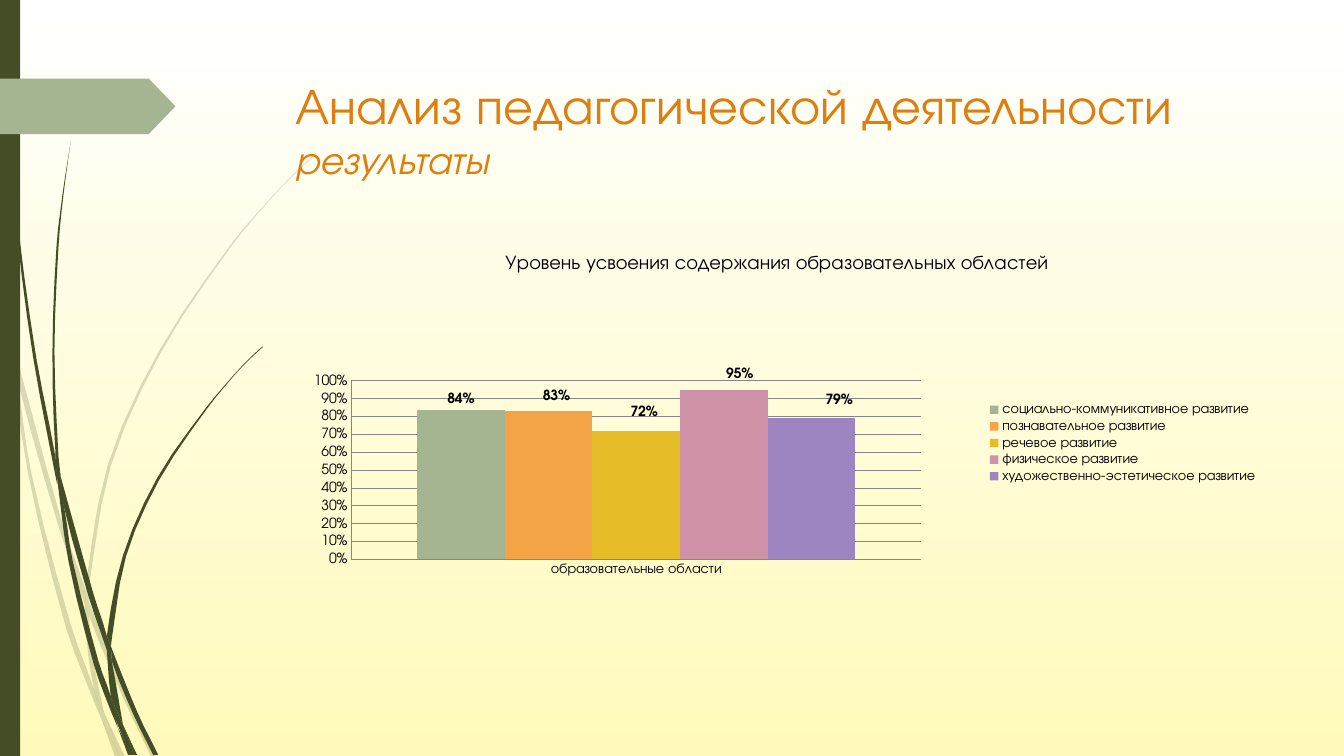
from math import dist
from lxml import etree
from pptx import Presentation
from pptx.chart.data import CategoryChartData
from pptx.dml.color import RGBColor
from pptx.enum.chart import XL_CHART_TYPE as Kind, XL_LABEL_POSITION as Spot
from pptx.enum.chart import XL_LEGEND_POSITION as Side, XL_TICK_MARK as Tick
from pptx.enum.shapes import MSO_SHAPE as Form
from pptx.enum.text import MSO_ANCHOR as Anchor
from pptx.oxml import parse_xml
from pptx.oxml.ns import qn
from pptx.util import Inches, Pt

WIDE, HIGH = 13.33, 7.5
FONT = "TeX Gyre Adventor"
DARK, SAGE, AMBER, GRAY = "444D26", "A5B592", "DD7E0E", "868686"
SKY = ["FFFFFF", "FFFABB"]

# Title runs: text, size, italic
TITLE = [("Анализ педагогической деятельности ", 36, False),
         ("результаты", 28, True)]

# Chart: name, value, colour, label shift as shares of the chart
HEAD = "Уровень усвоения содержания образовательных областей"
GROUP = "образовательные области"
AREAS = [
    ("социально-коммуникативное развитие", 0.84, SAGE, None),
    ("познавательное развитие", 0.83, "F3A447", (0.008, -0.012)),
    ("речевое развитие", 0.72, "E7BC29", (0.008, -0.02)),
    ("физическое развитие", 0.95, "D092A7", (0.016, -0.012)),
    ("художественно-эстетическое развитие", 0.79, "9C85C0", (0.028, -0.02)),
]
PLOT = {"x": 0.067, "y": 0.351, "w": 0.58, "h": 0.429}

# Grass blades: the knots of each outline, in inches
PALE = [
    [(0.11, 3.5), (0.09, 3.22), (0, 2.82), (0, 2.99), (0.1, 3.44)],
    [(0.58, 5.22), (0.84, 5.99), (0.85, 5.86), (0.62, 5.2), (0.14, 3.45),
     (0.17, 3.76)],
    [(0.92, 6.07), (0.88, 5.96), (0.88, 6.1), (1.23, 6.94), (1.5, 7.51),
     (1.55, 7.51), (1.27, 6.92)],
    [(1.19, 7.51), (1.24, 7.51), (1.05, 7.11)],
    [(0.93, 6.83), (0.7, 6.19), (0.31, 4.69), (0.17, 3.76), (0.11, 3.5),
     (0.28, 4.7), (0.65, 6.21), (0.92, 6.93), (1.01, 7.14), (0.99, 7.07)],
    [(0.84, 5.99), (0.87, 6.46), (0.93, 6.83), (0.96, 6.92), (1.05, 7.11),
     (1.03, 7.06), (0.91, 6.46), (0.88, 6.1)],
    [(0.88, 5.84), (1.1, 4.62), (1.6, 3.49), (2.29, 2.45), (2.68, 1.98),
     (2.9, 1.75), (3.12, 1.54), (3.12, 1.53), (2.89, 1.75), (2.68, 1.97),
     (2.28, 2.44), (1.58, 3.48), (1.07, 4.61), (0.85, 5.84), (0.88, 5.96)],
    [(1.01, 7.14), (1.14, 7.51), (1.19, 7.51)],
    [(0.88, 6.1), (0.88, 5.96), (0.85, 5.86), (0.84, 5.99)],
    [(0.96, 6.92), (0.93, 6.83), (0.99, 7.07), (1.01, 7.14), (1.19, 7.51),
     (1.05, 7.11)],
]
DEEP = [
    [(0.07, 1.1), (0.17, 2.33), (0.33, 3.55), (0.56, 4.77), (0.57, 4.81),
     (0.55, 4.53), (0.36, 3.55), (0.19, 2.32), (0.08, 1.09), (0.05, 0.48),
     (0.04, 0), (0.03, 0), (0.04, 0.48)],
    [(0.88, 5.92), (1.06, 6.45), (1.06, 6.31), (0.93, 5.9), (0.6, 4.72),
     (0.64, 5.05)],
    [(1.13, 6.49), (1.1, 6.41), (1.11, 6.56), (1.32, 7.08), (1.52, 7.49),
     (1.57, 7.49), (1.36, 7.06)],
    [(1.1, 6.91), (0.98, 6.57), (0.72, 5.56), (0.64, 5.05), (0.57, 4.77),
     (0.68, 5.57), (0.93, 6.59), (1.11, 7.08), (1.17, 7.22), (1.16, 7.17)],
    [(0.6, 4.72), (0.58, 4.53), (0.54, 3.49), (0.58, 2.45), (0.63, 1.93),
     (0.7, 1.41), (0.62, 1.93), (0.56, 2.45), (0.52, 3.49), (0.55, 4.49)],
    [(1.33, 7.49), (1.36, 7.49), (1.22, 7.19)],
    [(0.57, 4.77), (0.64, 5.05), (0.6, 4.72), (0.55, 4.49), (0.55, 4.53)],
    [(1.11, 6.33), (1.25, 5.52), (1.58, 4.76), (2.05, 4.06), (2.31, 3.74),
     (2.45, 3.59), (2.61, 3.44), (2.6, 3.44), (2.45, 3.58), (2.31, 3.73),
     (2.04, 4.05), (1.56, 4.74), (1.22, 5.51), (1.06, 6.31), (1.1, 6.41)],
    [(1.17, 7.22), (1.27, 7.49), (1.31, 7.49)],
    [(1.06, 6.45), (1.1, 6.91), (1.16, 7.06), (1.22, 7.19), (1.11, 6.56),
     (1.09, 6.51)],
    [(1.06, 6.45), (1.11, 6.56), (1.1, 6.41), (1.06, 6.31)],
    [(1.16, 7.06), (1.1, 6.91), (1.16, 7.17), (1.3, 7.49), (1.33, 7.49),
     (1.22, 7.19)],
]


def color(code):
    return RGBColor.from_string(code)


def paint(shape, code, alpha=None):
    shape.shadow.inherit = False
    shape.fill.solid()
    shape.fill.fore_color.rgb = color(code)
    shape.line.fill.background()
    if alpha:
        tint = shape.fill._xPr.find(".//" + qn("a:srgbClr"))
        etree.SubElement(tint, qn("a:alpha")).set("val", str(alpha * 1000))


def unit(a, b):
    return [(q - p) / dist(a, b) for p, q in zip(a, b)]


def smooth(ring, steps=3):
    """Curve through all knots of a ring, keeping its sharp corners."""
    curve = []
    for i, b in enumerate(ring):
        a, c, d = ring[i - 1], ring[(i + 1) % len(ring)], ring[(i + 2) % len(ring)]
        way, size = unit(b, c), dist(b, c)
        bend = [sum(p * q for p, q in zip(way, unit(*leg)))
                for leg in ((a, b), (c, d))]
        start = unit(a, c) if bend[0] > 0.7 else way
        stop = unit(b, d) if bend[1] > 0.7 else way
        for t in (n / steps for n in range(steps if size > 0.2 else 1)):
            curve.append(tuple(
                p + t * t * (3 - 2 * t) * (q - p)
                + size * t * (1 - t) * ((1 - t) * u - t * v)
                for p, q, u, v in zip(b, c, start, stop)))
    return curve


def blade(ring, alpha=None):
    dots = [(x * 1000, y * 1000) for x, y in smooth(ring)]
    pen = slide.shapes.build_freeform(*dots[0], scale=Inches(1) / 1000)
    pen.add_line_segments(dots[1:], close=True)
    paint(pen.convert_to_shape(), DARK, alpha)


def layout(inner="", **share):
    parts = "".join(f'<c:{k} val="{v}"/>' for k, v in share.items())
    return parse_xml(
        '<c:layout xmlns:c="http://schemas.openxmlformats.org/drawingml/2006/'
        f'chart"><c:manualLayout>{inner}{parts}</c:manualLayout></c:layout>')


def style(font, size, code="000000", bold=False):
    font.name, font.size, font.bold = FONT, Pt(size), bold
    font.color.rgb = color(code)


deck = Presentation()
deck.slide_width, deck.slide_height = Inches(WIDE), Inches(HIGH)
slide = deck.slides.add_slide(deck.slide_layouts[6])
# Background
back = slide.background.fill
back.gradient()
back.gradient_angle = 270
for stop, code in zip(back.gradient_stops, SKY):
    stop.color.rgb = color(code)
# Grass, side bar and arrow
for ring in PALE:
    blade(ring, alpha=20)
for ring in DEEP:
    blade(ring)
bar = slide.shapes.add_shape(Form.RECTANGLE, 0, 0, Inches(0.2), Inches(HIGH))
paint(bar, DARK)
arrow = slide.shapes.add_shape(Form.PENTAGON, 0, Inches(0.78), Inches(1.74), Inches(0.55))
arrow.adjustments[0] = 0.48
paint(arrow, SAGE)
# Title
box = slide.shapes.add_textbox(Inches(2.83), Inches(0.69), Inches(9.75), Inches(1.4))
frame = box.text_frame
frame.word_wrap, frame.vertical_anchor = True, Anchor.TOP
for text, size, slant in TITLE:
    run = frame.paragraphs[0].add_run()
    run.text = text
    style(run.font, size, AMBER)
    run.font.italic = slant
# Chart
data = CategoryChartData(number_format="0%")
data.categories = [GROUP]
for name, value, *_ in AREAS:
    data.add_series(name, [value])
chart = slide.shapes.add_chart(Kind.COLUMN_CLUSTERED, Inches(2.83), Inches(2.33),
                               Inches(9.75), Inches(4.13), data).chart
style(chart.font, 10)
chart.has_title = chart.has_legend = True
chart.chart_title.text_frame.text = HEAD
style(chart.chart_title.text_frame.paragraphs[0].runs[0].font, 14)
chart.chart_title.include_in_layout = chart.legend.include_in_layout = False
chart.legend.position = Side.RIGHT
# Plot area and axes
area = chart._chartSpace.chart.plotArea
for old in area.findall(qn("c:layout")):
    area.remove(old)
area.insert(0, layout('<c:layoutTarget val="inner"/>', xMode="edge", yMode="edge", **PLOT))
rise, base = chart.value_axis, chart.category_axis
rise.minimum_scale, rise.maximum_scale, rise.major_unit = 0, 1, 0.1
rise.tick_labels.number_format = "0%"
rise.tick_labels.number_format_is_linked = False
rise.has_major_gridlines = True
for axis in (rise, base):
    axis.major_tick_mark = axis.minor_tick_mark = Tick.NONE
    style(axis.tick_labels.font, 10)
for part in (rise.major_gridlines, rise, base):
    part.format.line.color.rgb, part.format.line.width = color(GRAY), Pt(0.75)
# Columns and their labels
plot = chart.plots[0]
plot.gap_width, plot.overlap, plot.vary_by_categories = 150, 0, False
for series, (_, _, code, shift) in zip(plot.series, AREAS):
    series.format.fill.solid()
    series.format.fill.fore_color.rgb = color(code)
    tags = series.data_labels
    tags.show_value, tags.position = True, Spot.OUTSIDE_END
    tags.number_format, tags.number_format_is_linked = "0%", False
    style(tags.font, 10, bold=True)
    for lead in series._element.iter(qn("c:showLeaderLines")):
        lead.set("val", "0")
    if shift:
        tag = series.points[0].data_label
        style(tag.font, 10, bold=True)
        tag.position = Spot.OUTSIDE_END
        node = series._element.find(".//" + qn("c:dLbl"))
        node.insert(1, layout(x=shift[0], y=shift[1]))
deck.save("out.pptx")
